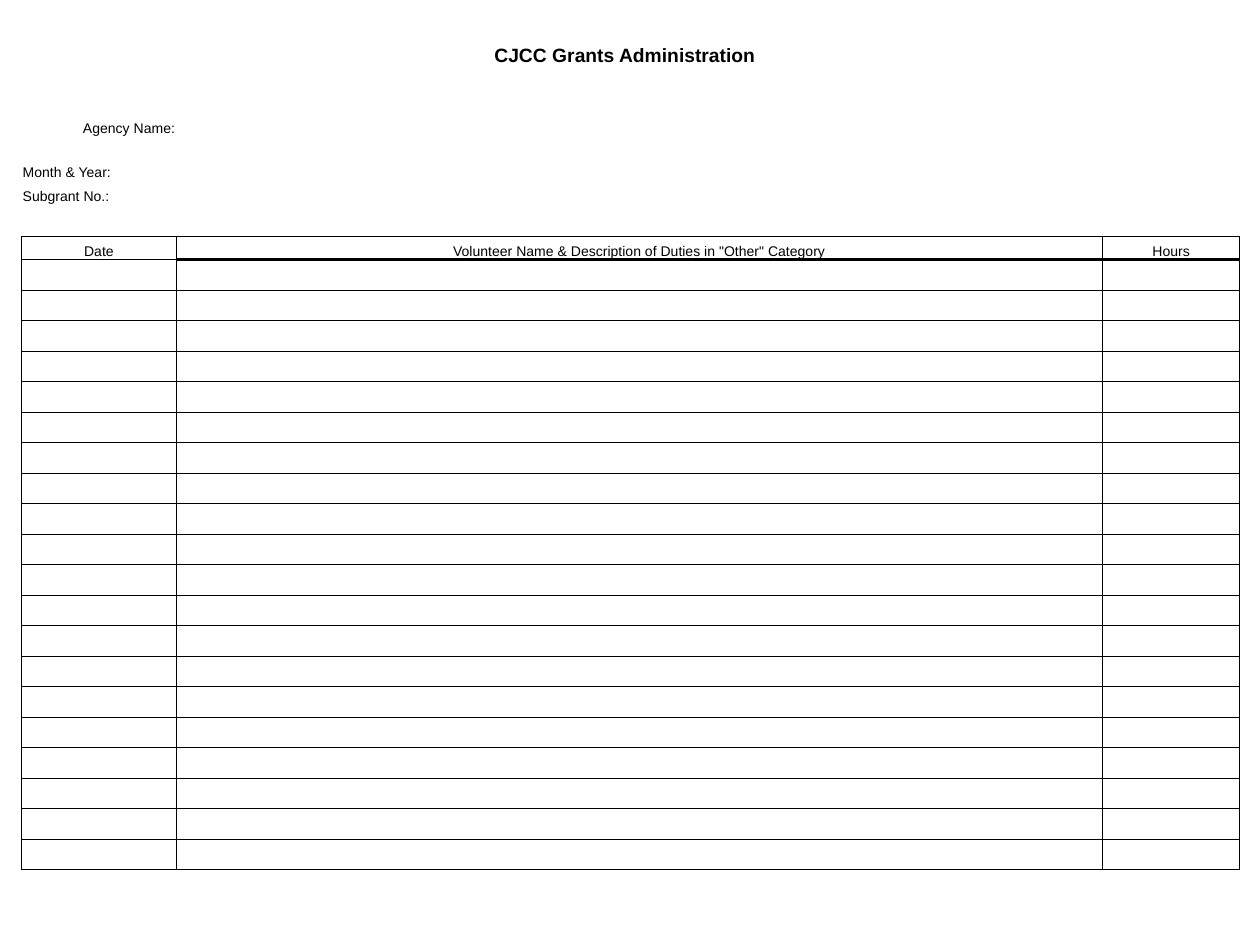
from lxml.etree import SubElement
from pptx import Presentation
from pptx.dml.color import RGBColor
from pptx.enum.text import MSO_ANCHOR, PP_ALIGN
from pptx.oxml.ns import qn
from pptx.util import Inches, Pt

COLUMNS = [1.23, 7.35, 1.09]
FORM_ROWS = [0.2, 0.2, 0.35, 0.35, 0.19, 0.26, 0.18]
ENTRY_ROWS = 20
TABLE_HEIGHT = 6.58
HEADER = len(FORM_ROWS) - 1
NO_GRID_STYLE = "{2D5ABB26-0587-4C30-8999-92F81FD0307C}"


def rgb(value):
    return RGBColor.from_string(value)


def set_all(obj, values):
    for name, value in values.items():
        setattr(obj, name, value)


class Form:
    font = {"name": "Arial", "size": Pt(8), "bold": False}
    ink = "000000"
    cell = {
        "vertical_anchor": MSO_ANCHOR.BOTTOM,
        "margin_left": Inches(0.01),
        "margin_right": Inches(0.01),
        "margin_top": Inches(0.01),
        "margin_bottom": 0,
    }

    def __init__(self, prs):
        self.s = prs.slides.add_slide(prs.slide_layouts[6])

    def table(self, left, top, widths, heights):
        frame = self.s.shapes.add_table(
            len(heights), len(widths), Inches(left), Inches(top),
            Inches(sum(widths)), Inches(sum(heights)))
        tbl = frame.table
        set_all(tbl, {"first_row": False, "horz_banding": False})
        tbl._tbl.tblPr.find(qn("a:tableStyleId")).text = NO_GRID_STYLE
        for col, width in zip(tbl.columns, widths):
            col.width = Inches(width)
        for row, height in zip(tbl.rows, heights):
            row.height = Inches(height)
        for cell in tbl.iter_cells():
            set_all(cell, self.cell)
            end = SubElement(cell.text_frame.paragraphs[0]._p, qn("a:endParaRPr"))
            end.set("sz", str(int(self.font["size"].pt * 100)))
        return tbl

    def text(self, cell, text, align, **font):
        p = cell.text_frame.paragraphs[0]
        p.alignment = align
        r = p.add_run()
        r.text = text
        set_all(r.font, {**self.font, **font})
        r.font.color.rgb = rgb(self.ink)

    def borders(self, cell, **widths):
        tcPr = cell._tc.get_or_add_tcPr()
        for side in "LRTB":
            width = widths.get(side, 0)
            ln = SubElement(tcPr, qn(f"a:ln{side}"), w=str(Pt(width)))
            if width:
                fill = SubElement(ln, qn("a:solidFill"))
                SubElement(fill, qn("a:srgbClr"), val=self.ink)
            else:
                SubElement(ln, qn("a:noFill"))
        cell.fill.background()


def grid_borders(row, col):
    if row < HEADER:
        return {"B": 0.5} if row == HEADER - 1 else {}
    sides = dict.fromkeys("LRTB", 0.5)
    if col > 0 and row == HEADER:
        sides["B"] = 2
    if col > 0 and row == HEADER + 1:
        sides["T"] = 2
    return sides


def main():
    prs = Presentation()
    set_all(prs, {"slide_width": Inches(10), "slide_height": Inches(7.5)})
    form = Form(prs)
    entry_height = (TABLE_HEIGHT - sum(FORM_ROWS)) / ENTRY_ROWS
    tbl = form.table(0.17, 0.33, COLUMNS, FORM_ROWS + [entry_height] * ENTRY_ROWS)

    for row in range(len(tbl.rows)):
        for col in range(len(tbl.columns)):
            form.borders(tbl.cell(row, col), **grid_borders(row, col))

    title = tbl.cell(0, 0)
    title.merge(tbl.cell(0, 1))
    title.margin_left = Inches(1.01)
    form.text(title, "CJCC Grants Administration", PP_ALIGN.CENTER,
              size=Pt(11), bold=True)

    labels = [
        (2, "Agency Name:", PP_ALIGN.RIGHT),
        (3, "Month & Year:", PP_ALIGN.LEFT),
        (4, "Subgrant No.:", PP_ALIGN.LEFT),
    ]
    for row, label, align in labels:
        form.text(tbl.cell(row, 0), label, align)

    headings = ["Date", 'Volunteer Name & Description of Duties in "Other" Category',
                "Hours"]
    for col, heading in enumerate(headings):
        form.text(tbl.cell(HEADER, col), heading, PP_ALIGN.CENTER)

    prs.save("out.pptx")


if __name__ == "__main__":
    main()
